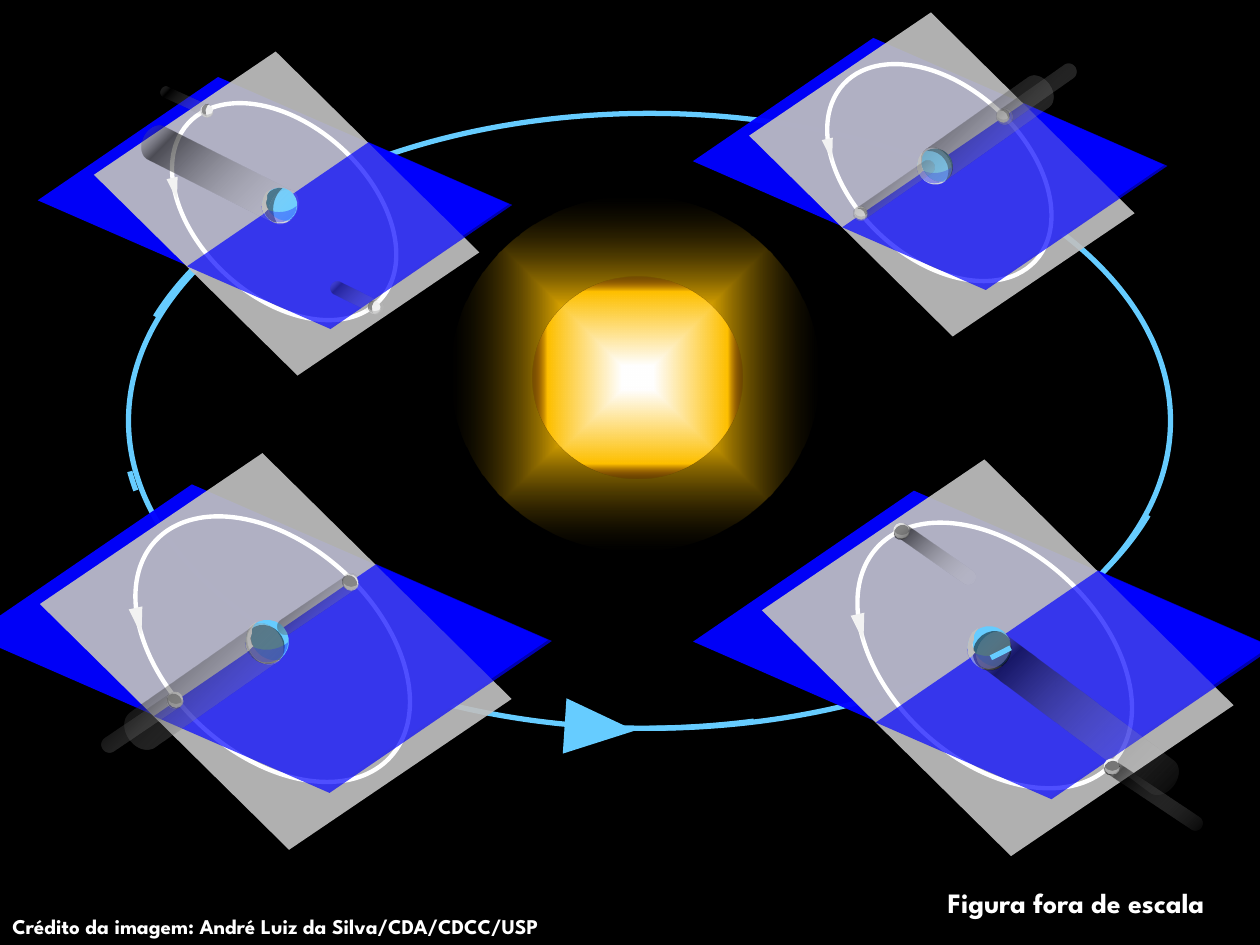
"""Earth and Moon at four points of the orbit around the Sun, with orbital planes and shadows."""
from pptx import Presentation
from pptx import util as u
from pptx.dml.color import RGBColor
from pptx.enum import shapes as s, text as t
from pptx.oxml import parse_xml
from pptx.oxml.ns import nsdecls, qn

WHITE, BLACK = RGBColor(255, 255, 255), RGBColor(0, 0, 0)
SKY, BLUE = RGBColor(0x66, 0xCC, 0xFF), RGBColor(0, 0, 255)
GREY, PALE = RGBColor(0xBF, 0xBF, 0xBF), RGBColor(0xF2, 0xF2, 0xF2)
LAND, SILVER = RGBColor(0xD9, 0xD9, 0xD9), RGBColor(0xC0, 0xC0, 0xC0)
AMBER, EMBER = RGBColor(0xFF, 0xC0, 0), RGBColor(0x4D, 8, 8)
KIND = s.MSO_SHAPE
CM_PER_UNIT = 2.54
ARC_UNIT = 0.6


def place(target, kind, box, turn=0, adjust=(), color=None, alpha=100, stroke=0):
    """Add a preset shape, filled with color or outlined with it when stroke is given."""
    shape = target.add_shape(kind, *(u.Cm(v * CM_PER_UNIT) for v in box))
    shape.shadow.inherit = False
    shape.rotation = turn
    for i, value in enumerate(adjust):
        shape.adjustments[i] = value
    shape.fill.background()
    shape.line.fill.background()
    if stroke:
        shape.line.color.rgb = color
        shape.line.width = u.Pt(stroke)
    elif color is not None:
        shape.fill.solid()
        shape.fill.fore_color.rgb = color
        rgb = shape._element.spPr.find(qn("a:solidFill"))[0]
        rgb.append(parse_xml(f'<a:alpha {nsdecls("a")} val="{alpha * 1000}"/>'))
    return shape


def glow(shape, route, focus, stops):
    """Give a shape a path gradient of (position, color, opacity) stops."""
    marks = "".join(f'<a:gs pos="{p * 1000}"><a:srgbClr val="{c}"><a:alpha val="{a * 1000}"/>'
                    "</a:srgbClr></a:gs>" for p, c, a in stops)
    edges = " ".join(f'{side}="{v * 1000}"' for side, v in zip("ltrb", focus))
    fill = parse_xml(f'<a:gradFill {nsdecls("a")} rotWithShape="1"><a:gsLst>{marks}</a:gsLst>'
                     f'<a:path path="{route}"><a:fillToRect {edges}/></a:path></a:gradFill>')
    properties = shape._element.spPr
    properties.replace(properties.find(qn("a:noFill")), fill)


deck = Presentation()
deck.slide_width, deck.slide_height = u.Cm(25.4), u.Cm(19.05)
slide = deck.slides.add_slide(deck.slide_layouts[6])
slide.background.fill.solid()
slide.background.fill.fore_color.rgb = BLACK

place(slide.shapes, KIND.OVAL, (1.02, 0.9, 8.27, 4.88), color=SKY, stroke=3)

sun = slide.shapes.add_group_shape().shapes
for box, stops in (
    ((3.58, 1.55, 2.92, 2.83), ((7, WHITE, 100), (32, AMBER, 100), (100, BLACK, 23))),
    ((4.23, 2.2, 1.66, 1.6), ((12, WHITE, 100), (85, AMBER, 100), (100, EMBER, 17))),
):
    glow(place(sun, KIND.OVAL, box), "shape", (50, 50, 50, 50), stops)
place(slide.shapes, KIND.ISOSCELES_TRIANGLE, (4.54, 5.5, 0.44, 0.56), 93.8, color=SKY)

EARTH_PARTS = (
    (KIND.PARALLELOGRAM, (-1.63, -0.62, 3.44, 1.47), 23.6, (0.626,), BLUE, 97, 0),
    (KIND.PARALLELOGRAM, (-1.11, -0.65, 2.61, 1.71), 44.6, (0.199,), GREY, 92, 0),
    (KIND.OVAL, (-0.86, -0.49, 2.07, 1.36), 42.6, (), WHITE, 100, 2.5),
    (KIND.PARALLELOGRAM, (-0.39, -0.36, 2.17, 1.48), 23.6, (0.626,), BLUE, 69, 0),
    (KIND.OVAL, (0, 0, 0.28, 0.28), 351.5, (), SKY, 100, 0),
    (KIND.MOON, (0.02, 0.05, 0.13, 0.28), 320.6, (0.341,), LAND, 94, 0),
    (KIND.MOON, (0.07, 0.07, 0.13, 0.28), 270, (0.629,), BLUE, 36, 0),
    (KIND.ISOSCELES_TRIANGLE, (-0.74, -0.08, 0.09, 0.18), 167.6, (), PALE, 100, 0),
)
CONTINENT = ((0.07, 0.01), (0.05, 0.04), (0.04, 0.06), (0.04, 0.09), (0.03, 0.12),
             (0.04, 0.16), (0.05, 0.17), (0.02, 0.2), (0.01, 0.2), (0, 0.17),
             (0, 0.13), (0.01, 0.08), (0.03, 0.04))

SYSTEMS = (
    (7.28, 1.18, 1, (KIND.MOON, (0.14, -0.04, 0.13, 0.28), 146.6, (0.358,), 47), (
        ("moon", 6.78, 1.64, KIND.MOON, (0.05, -0.01, 0.05, 0.1), 142.5, (0.463,), 47),
        ("moon", 7.91, 0.87, KIND.MOON, (0.05, -0.02, 0.05, 0.1), 142.5, (0.463,), 47),
        ("orbit", (0.98, 0.9), 192.25, 202.94),
        ("shadow", (8.16, 0.37, 0.13, 0.75), 235.1, 0.977, 56),
        ("shadow", (7.69, 0.42, 0.29, 1.2), 234.8, 0.745, 56),
        ("shadow", (7.04, 1.14, 0.11, 0.75), 235.2, 0.977, 56))),
    (2.08, 1.49, 1, (KIND.MOON, (0.01, -0.01, 0.13, 0.28), 9.4, (0.629,), 47), (
        ("moon", 2.92, 2.39, KIND.MOON, (0, -0.01, 0.05, 0.1), 9.4, (0.629,), 47),
        ("moon", 1.59, 0.83, KIND.MOON, (0.01, -0.01, 0.05, 0.1), 9.4, (0.629,), 47),
        ("orbit", (0.97, 0.92), 127.98, 137.49),
        ("shadow", (1.6, 0.72, 0.29, 1.34), 116.5, 0.745, 56),
        ("shadow", (2.78, 2.14, 0.11, 0.45), 116.4, 0.977, 35),
        ("shadow", (1.43, 0.59, 0.09, 0.43), 114, 0.866, 56),
        ("orbit", (0.98, 0.9), 172.51, 174.68),
        ("orbit", (1.01, 0.87), 100.64, 102.81))),
    (7.68, 4.97, 1.224, (KIND.OVAL, (0.05, 0.03, 0.29, 0.33), 220, (), 51), (
        ("moon", 7.09, 4.15, KIND.OVAL, (0.01, 0.01, 0.11, 0.13), 48.2, (), 51),
        ("shadow", (8.39, 4.71, 0.32, 1.9), 306.8, 0.745, 56),
        ("shadow", (7.36, 4.02, 0.12, 0.75), 304.8, 0.977, 56),
        ("shadow", (9.09, 5.85, 0.12, 0.92), 303.7, 0.977, 56),
        ("moon", 8.76, 6.02, KIND.OVAL, (0.01, 0.01, 0.11, 0.13), 240.2, (), 51),
        ("orbit", (1.05, 0.81), 11.81, 19.65),
        ("orbit", (1.1, 0.85), 33.45, 36.15))),
    (1.95, 4.92, 1.224, (KIND.OVAL, (0.01, 0.03, 0.29, 0.33), 316.4, (), 51), (
        ("moon", 1.33, 5.49, KIND.OVAL, (0, 0.01, 0.11, 0.13), 316.4, (), 51),
        ("moon", 2.72, 4.56, KIND.OVAL, (0, 0, 0.11, 0.13), 316.4, (), 51),
        ("orbit", (0.95, 0.86), 69.82, 88.74),
        ("shadow", (2.46, 4.42, 0.13, 0.75), 56, 0.977, 56),
        ("shadow", (1.45, 4.73, 0.34, 1.44), 55, 0.771, 56),
        ("shadow", (1.06, 5.36, 0.13, 0.75), 56, 0.977, 56))),
)

for left, top, scale, night, steps in SYSTEMS:
    system = slide.shapes.add_group_shape().shapes
    for kind, (x, y, w, h), *style in EARTH_PARTS:
        if style[2] == BLUE and kind == KIND.MOON:
            shade, (dx, dy, sw, sh), turn, adjust, alpha = night
            place(system, shade, (left + dx, top + dy, sw, sh), turn, adjust, BLACK, alpha)
        place(system, kind, (left + x * scale, top + y * scale, w * scale, h * scale), *style)

    outline = [(u.Cm((left + x * scale) * CM_PER_UNIT), u.Cm((top + y * scale) * CM_PER_UNIT))
               for x, y in CONTINENT]
    builder = system.build_freeform(*outline[0])
    builder.add_line_segments(outline[1:], close=True)
    continent = builder.convert_to_shape()
    continent.shadow.inherit = False
    continent.line.fill.background()
    continent.fill.solid()
    continent.fill.fore_color.rgb = GREY

    for role, *details in steps:
        if role == "moon":
            x, y, shade, (dx, dy, w, h), turn, adjust, alpha = details
            size = 0.1 * scale
            place(system, KIND.OVAL, (x, y, size, size), 351.5, color=PALE)
            place(system, shade, (x + dx, y + dy, w, h), turn, adjust, BLACK, alpha)
            place(system, KIND.MOON, (x + 0.03 * scale, y + 0.03 * scale, size / 2, size),
                  270, (0.497,), SILVER, 72)
        elif role == "orbit":
            corner, start, end = details
            place(system, KIND.ARC, (*corner, 8.3, 4.92), 0,
                  (start * ARC_UNIT, end * ARC_UNIT), SKY, stroke=3)
        else:
            box, turn, rim, alpha = details
            glow(place(system, KIND.CAN, box, turn, (rim,)), "circle", (100, 100, 0, 0),
                 ((0, WHITE, 0), (81, BLACK, alpha), (100, GREY, 0)))

for words, box, size, wrap, align in (
    ("Crédito da imagem: André Luiz da Silva/CDA/CDCC/USP", (0, 7.2, 5.28, 0.3), 12, True,
     t.PP_ALIGN.LEFT),
    ("Figura fora de escala", (7.28, 6.98, 2.52, 0.37), 16, False, t.PP_ALIGN.CENTER),
):
    caption = slide.shapes.add_textbox(*(u.Cm(v * CM_PER_UNIT) for v in box)).text_frame
    caption.text = words
    caption.word_wrap = wrap
    caption.auto_size = t.MSO_AUTO_SIZE.SHAPE_TO_FIT_TEXT
    caption.paragraphs[0].alignment = align
    font = caption.paragraphs[0].runs[0].font
    font.name, font.size, font.bold = "League Spartan", u.Pt(size), True
    font.color.rgb = WHITE

deck.save("out.pptx")
